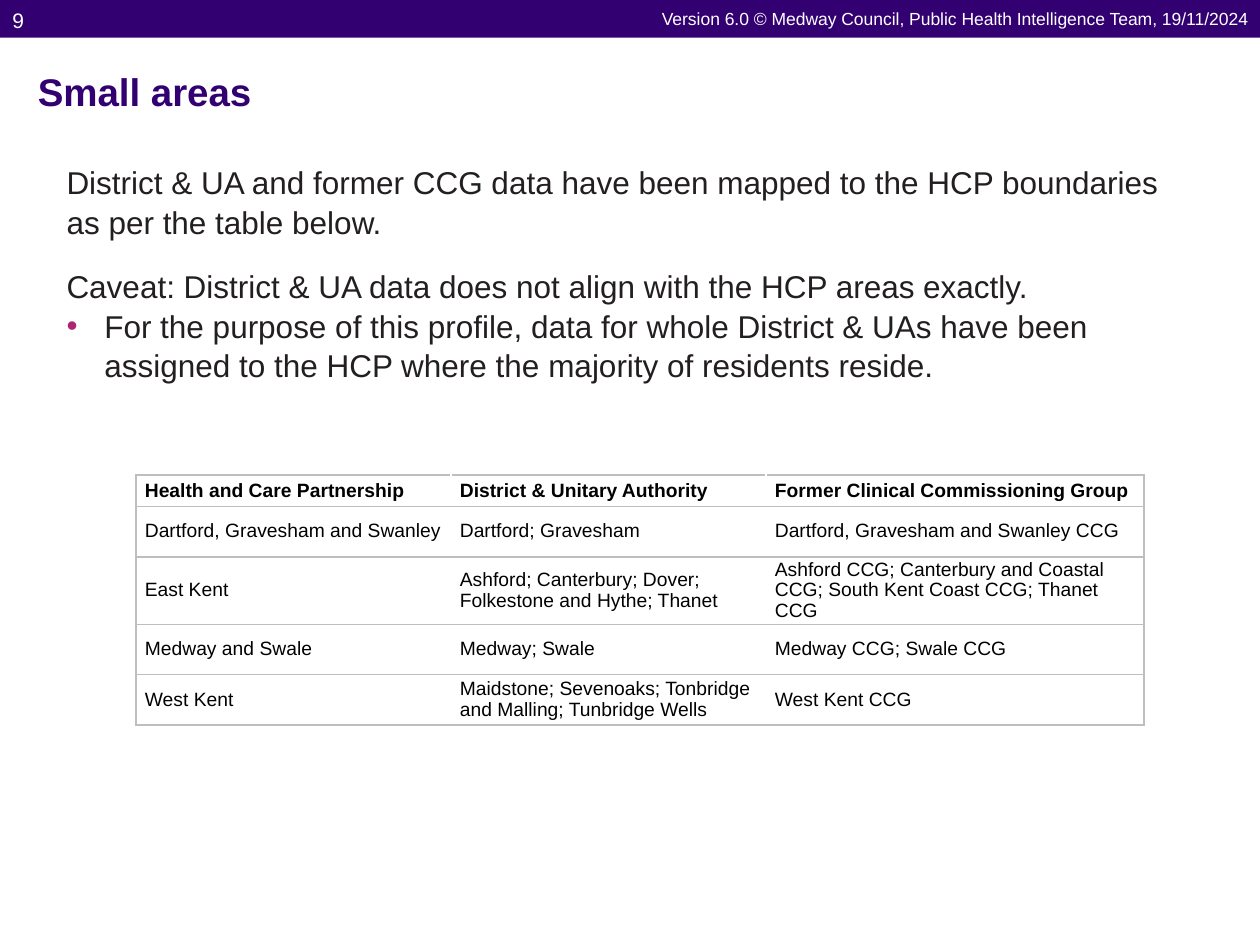
from pptx import Presentation
from pptx.dml.color import RGBColor
from pptx.enum.shapes import MSO_SHAPE
from pptx.enum.text import MSO_ANCHOR, MSO_AUTO_SIZE, PP_ALIGN
from pptx.oxml import parse_xml
from pptx.oxml.ns import nsdecls
from pptx.util import Inches, Pt

UNIT = 0.1  # grid of 100 columns by 75 rows
PURPLE, PINK, INK = "330072", "AE2573", "231F20"
WHITE, BLACK, GREY = "FFFFFF", "000000", "BEBEBE"

HEAD = ["Health and Care Partnership", "District & Unitary Authority",
        "Former Clinical Commissioning Group"]
AREAS = [
    ["Dartford, Gravesham and Swanley", "Dartford; Gravesham",
     "Dartford, Gravesham and Swanley CCG"],
    ["East Kent", "Ashford; Canterbury; Dover; Folkestone and Hythe; Thanet",
     "Ashford CCG; Canterbury and Coastal CCG; South Kent Coast CCG; Thanet CCG"],
    ["Medway and Swale", "Medway; Swale", "Medway CCG; Swale CCG"],
    ["West Kent", "Maidstone; Sevenoaks; Tonbridge and Malling; Tunbridge Wells",
     "West Kent CCG"],
]


def color(code):
    return RGBColor.from_string(code)


def grid(*cells):
    return [Inches(cell * UNIT) for cell in cells]


def write(para, text, size=18, ink=INK, bold=False, font="Arial",
          align=PP_ALIGN.LEFT, lead=1.05, after=0, bullet=None):
    """Fill a paragraph with one run; bullet is the colour of its dot."""
    para.alignment, para.line_spacing = align, lead
    para.space_before, para.space_after = Pt(0), Pt(after)
    run = para.add_run()
    run.text = text
    run.font.size, run.font.bold, run.font.name = Pt(size), bold, font
    run.font.color.rgb = color(ink)
    if bullet:
        props = para._p.get_or_add_pPr()
        props.set("marL", str(Inches(0.3)))
        props.set("indent", str(Inches(-0.3)))
        for tag in (f'<a:buClr {nsdecls("a")}><a:srgbClr val="{bullet}"/></a:buClr>',
                    f'<a:buFont {nsdecls("a")} typeface="Arial"/>',
                    f'<a:buChar {nsdecls("a")} char="•"/>'):
            props.append(parse_xml(tag))


def edge(cell, sides):
    """Draw grey lines on the given sides, listed in the order L, R, T, B."""
    props = cell._tc.get_or_add_tcPr()
    for spot, side in enumerate(sides):
        props.insert(spot, parse_xml(
            f'<a:ln{side} {nsdecls("a")} w="{Pt(1)}"><a:solidFill>'
            f'<a:srgbClr val="{GREY}"/></a:solidFill></a:ln{side}>'))


class Page:
    """The current slide and its kinds of element."""

    def __init__(self, deck):
        self.slide = deck.slides.add_slide(deck.slide_layouts[5])
        self.shapes = self.slide.shapes

    def title(self, text, box):
        shape = self.shapes.title
        shape.left, shape.top, shape.width, shape.height = grid(*box)
        frame = shape.text_frame
        frame.auto_size = MSO_AUTO_SIZE.NONE
        frame.vertical_anchor = MSO_ANCHOR.TOP
        write(frame.paragraphs[0], text, size=22, ink=PURPLE, bold=True)

    def bar(self, box, fill):
        shape = self.shapes.add_shape(MSO_SHAPE.RECTANGLE, *grid(*box))
        shape.shadow.inherit = False
        shape.fill.solid()
        shape.fill.fore_color.rgb = color(fill)
        shape.line.fill.background()

    def text(self, box, *paras, anchor=MSO_ANCHOR.TOP):
        """Add a text box; each para is a pair of text and format."""
        frame = self.shapes.add_textbox(*grid(*box)).text_frame
        frame.word_wrap, frame.vertical_anchor = True, anchor
        for spot, (words, style) in enumerate(paras):
            para = frame.add_paragraph() if spot else frame.paragraphs[0]
            write(para, words, **style)

    def table(self, left, top, wide, high, rows):
        """Add a table; the first row holds the headings."""
        box = grid(left, top, sum(wide), sum(high))
        table = self.shapes.add_table(len(high), len(wide), *box).table
        table.first_row = table.horz_banding = False
        for col, width in zip(table.columns, grid(*wide)):
            col.width = width
        for row, height in zip(table.rows, grid(*high)):
            row.height = height
        last = len(wide) - 1
        for y, row in enumerate(rows):
            for x, words in enumerate(row):
                cell = table.cell(y, x)
                cell.fill.background()
                cell.vertical_anchor = MSO_ANCHOR.MIDDLE
                cell.margin_left = Inches(0.07)
                cell.margin_right = cell.margin_top = cell.margin_bottom = 0
                write(cell.text_frame.paragraphs[0], words, size=11,
                      ink=BLACK, bold=y == 0, lead=0.97)
                edge(cell, {0: "LTB", last: "RTB"}.get(x, "TB"))


def main():
    deck = Presentation()
    deck.slide_width, deck.slide_height = grid(100, 75)
    page = Page(deck)
    page.bar((0, 0, 100, 3), PURPLE)
    page.title("Small areas", (2, 4.7, 96.1, 4.5))
    page.text((0, 0, 6.3, 6.3), ("9", dict(size=12, ink=WHITE)))
    page.text((28, 0, 72, 2.8),
              ("Version 6.0 © Medway Council, Public Health Intelligence Team, "
               "19/11/2024", dict(size=10, ink=WHITE, align=PP_ALIGN.RIGHT)),
              anchor=MSO_ANCHOR.MIDDLE)
    page.text((4.3, 12.3, 91.3, 22),
              ("District & UA and former CCG data have been mapped to the HCP "
               "boundaries as per the table below.", dict(after=14)),
              ("Caveat: District & UA data does not align with the HCP areas "
               "exactly.", {}),
              ("For the purpose of this profile, data for whole District & UAs "
               "have been assigned to the HCP where the majority of residents "
               "reside.", dict(bullet=PINK)))
    page.table(10.8, 37.7, [25, 25, 30], [2.5] + [4] * len(AREAS), [HEAD] + AREAS)
    deck.save("out.pptx")


if __name__ == "__main__":
    main()
